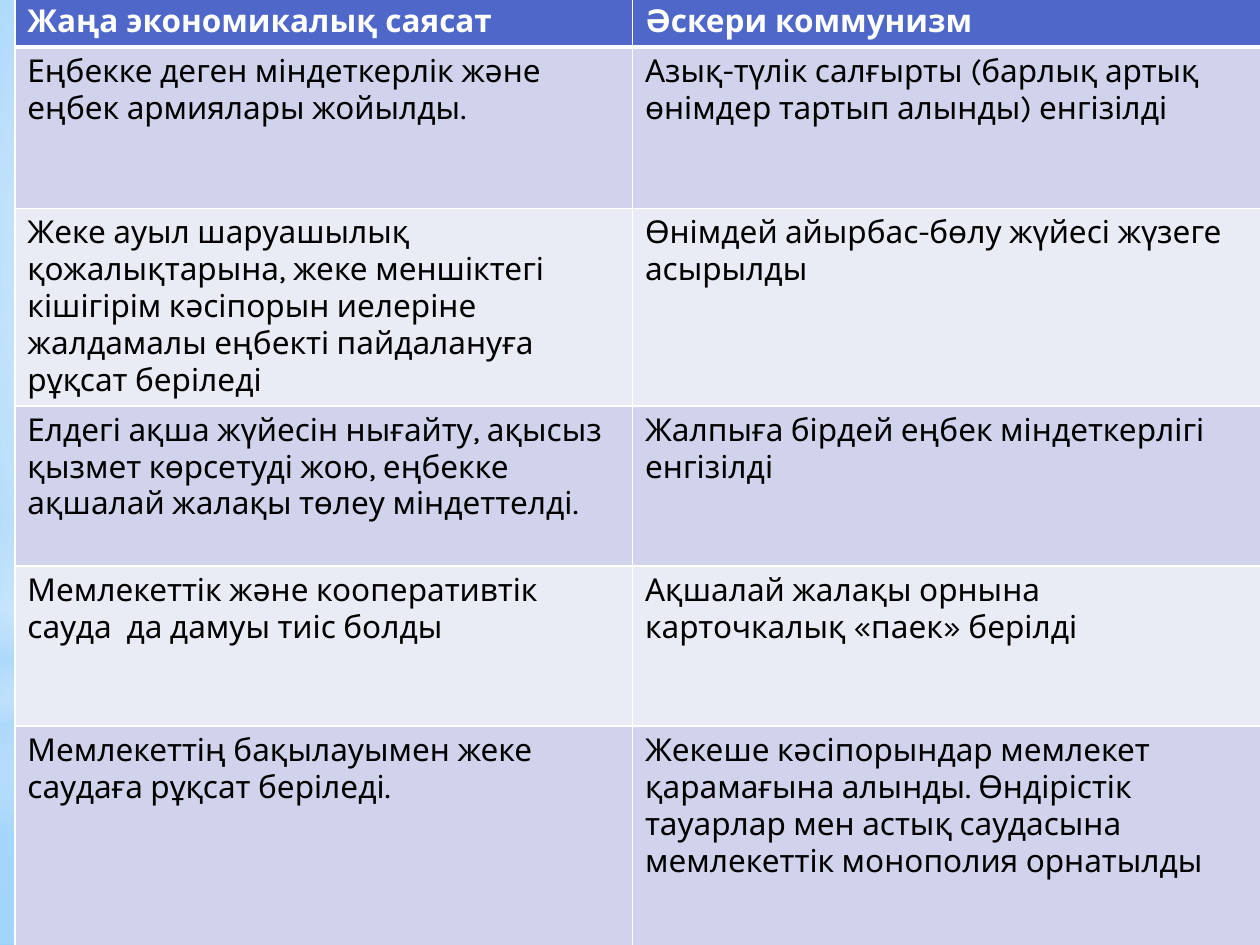
from dataclasses import dataclass
from typing import Optional

from lxml import etree
from pptx import Presentation
from pptx import util as u
from pptx.dml.color import RGBColor
from pptx.enum import shapes
from pptx.oxml import ns

FONT = "Karla"
WHITE, BLACK = "FFFFFF", "000000"
HEADER, BAND_DARK, BAND_LIGHT = "4E67C8", "D0D3EB", "E9EBF5"
SKY = "B4DCFA"


@dataclass
class Stop:
    position: int
    color: str
    alpha: int = 100


@dataclass
class Panel:
    shape: shapes.MSO_SHAPE
    top: float
    height: float
    stops: list[Stop]
    angle: Optional[int] = None


CENTER = (50, 50, 50, 50)
BACKDROP = [Stop(0, "9ED5FF"), Stop(60, WHITE), Stop(100, "5BB9FF")]
RECT, OVAL = shapes.MSO_SHAPE.RECTANGLE, shapes.MSO_SHAPE.OVAL
PANELS = [
    Panel(RECT, 14.17, 4.88, [Stop(0, WHITE, 91), Stop(37, WHITE, 76), Stop(100, SKY, 79)]),
    Panel(RECT, 0, 14.17, [Stop(0, WHITE, 89), Stop(48, WHITE, 62), Stop(100, SKY, 79)]),
    Panel(RECT, 10.46, 6.35, [Stop(0, WHITE, 0), Stop(29, WHITE, 30), Stop(45, SKY, 40),
                              Stop(55, WHITE, 26), Stop(65, SKY, 60), Stop(100, WHITE, 0)], 90),
    Panel(OVAL, 4.45, 14.17, [Stop(0, WHITE), Stop(56, WHITE, 0)]),
]

COLUMNS = [12.45, 12.67]
ROW_HEIGHTS = [1, 3.25, 3.97, 3.23, 3.23, 5.13]
ROWS = [
    ("Жаңа экономикалық саясат", "Әскери коммунизм"),
    ("Еңбекке деген міндеткерлік және еңбек армиялары жойылды.",
     "Азық-түлік салғырты (барлық артық өнімдер тартып алынды) енгізілді"),
    ("Жеке ауыл шаруашылық қожалықтарына, жеке меншіктегі кішігірім кәсіпорын "
     "иелеріне жалдамалы еңбекті пайдалануға рұқсат беріледі",
     "Өнімдей айырбас-бөлу жүйесі жүзеге асырылды"),
    ("Елдегі ақша жүйесін нығайту, ақысыз қызмет көрсетуді жою, еңбекке ақшалай "
     "жалақы төлеу міндеттелді.",
     "Жалпыға бірдей еңбек міндеткерлігі енгізілді"),
    ("Мемлекеттік және кооперативтік сауда  да дамуы тиіс болды",
     "Ақшалай жалақы орнына карточкалық «паек» берілді"),
    ("Мемлекеттің бақылауымен жеке саудаға рұқсат беріледі.",
     "Жекеше кәсіпорындар мемлекет қарамағына алынды. Өндірістік тауарлар мен "
     "астық саудасына мемлекеттік монополия орнатылды"),
]


def rgb(color: str) -> RGBColor:
    return RGBColor.from_string(color)


def add_node(parent, tag: str, **attrs):
    return etree.SubElement(parent, ns.qn(tag), {k: str(v) for k, v in attrs.items()})


def set_gradient(fill, owner, stops: list[Stop], focus=CENTER, angle: Optional[int] = None) -> None:
    """Circular gradient around focus, or a linear one when an angle is given."""
    fill.gradient()
    grad = next(owner.iter(ns.qn("a:gradFill")))
    for child in list(grad):
        grad.remove(child)
    stop_list = add_node(grad, "a:gsLst")
    for stop in stops:
        gs = add_node(stop_list, "a:gs", pos=stop.position * 1000)
        color = add_node(gs, "a:srgbClr", val=stop.color)
        if stop.alpha < 100:
            add_node(color, "a:alpha", val=stop.alpha * 1000)
    if angle is not None:
        add_node(grad, "a:lin", ang=angle * 60000, scaled=0)
    else:
        circle = add_node(grad, "a:path", path="circle")
        sides = {side: value * 1000 for side, value in zip("ltrb", focus)}
        add_node(circle, "a:fillToRect", **sides)


def add_panel(s, panel: Panel) -> None:
    sp = s.shapes.add_shape(panel.shape, 0, u.Cm(panel.top), u.Cm(25.4), u.Cm(panel.height))
    sp.shadow.inherit = False
    sp.line.fill.background()
    set_gradient(sp.fill, sp._element, panel.stops, angle=panel.angle)


def set_borders(cell, bottom: float) -> None:
    tc_pr = cell._tc.get_or_add_tcPr()
    widths = {"a:lnL": 1, "a:lnR": 1, "a:lnT": 1, "a:lnB": bottom}
    for index, (tag, width) in enumerate(widths.items()):
        line = etree.Element(ns.qn(tag), w=str(u.Pt(width)))
        add_node(add_node(line, "a:solidFill"), "a:srgbClr", val=WHITE)
        tc_pr.insert(index, line)


def fill_cell(cell, content: str, row: int) -> None:
    is_header = row == 0
    cell.text_frame.text = content
    font = cell.text_frame.paragraphs[0].runs[0].font
    font.name, font.size, font.bold = FONT, u.Pt(18), is_header
    font.color.rgb = rgb(WHITE if is_header else BLACK)
    cell.fill.solid()
    band = BAND_DARK if row % 2 else BAND_LIGHT
    cell.fill.fore_color.rgb = rgb(HEADER if is_header else band)
    set_borders(cell, 3 if is_header else 1)


def add_comparison_table(s) -> None:
    frame = s.shapes.add_table(len(ROWS), len(COLUMNS), u.Cm(0.3), u.Cm(-0.05),
                               u.Cm(sum(COLUMNS)), u.Cm(sum(ROW_HEIGHTS)))
    table = frame.table
    for column, width in zip(table.columns, COLUMNS):
        column.width = u.Cm(width)
    for row, height in zip(table.rows, ROW_HEIGHTS):
        row.height = u.Cm(height)
    for i, contents in enumerate(ROWS):
        for j, content in enumerate(contents):
            fill_cell(table.cell(i, j), content, i)


def main() -> None:
    prs = Presentation()
    prs.slide_width, prs.slide_height = u.Cm(25.4), u.Cm(19.05)
    s = prs.slides.add_slide(prs.slide_layouts[6])

    # Sky backdrop
    set_gradient(s.background.fill, s._element, BACKDROP, focus=(20, 10, 20, 60))
    for panel in PANELS:
        add_panel(s, panel)

    # Policy comparison
    add_comparison_table(s)
    prs.save("out.pptx")


if __name__ == "__main__":
    main()
